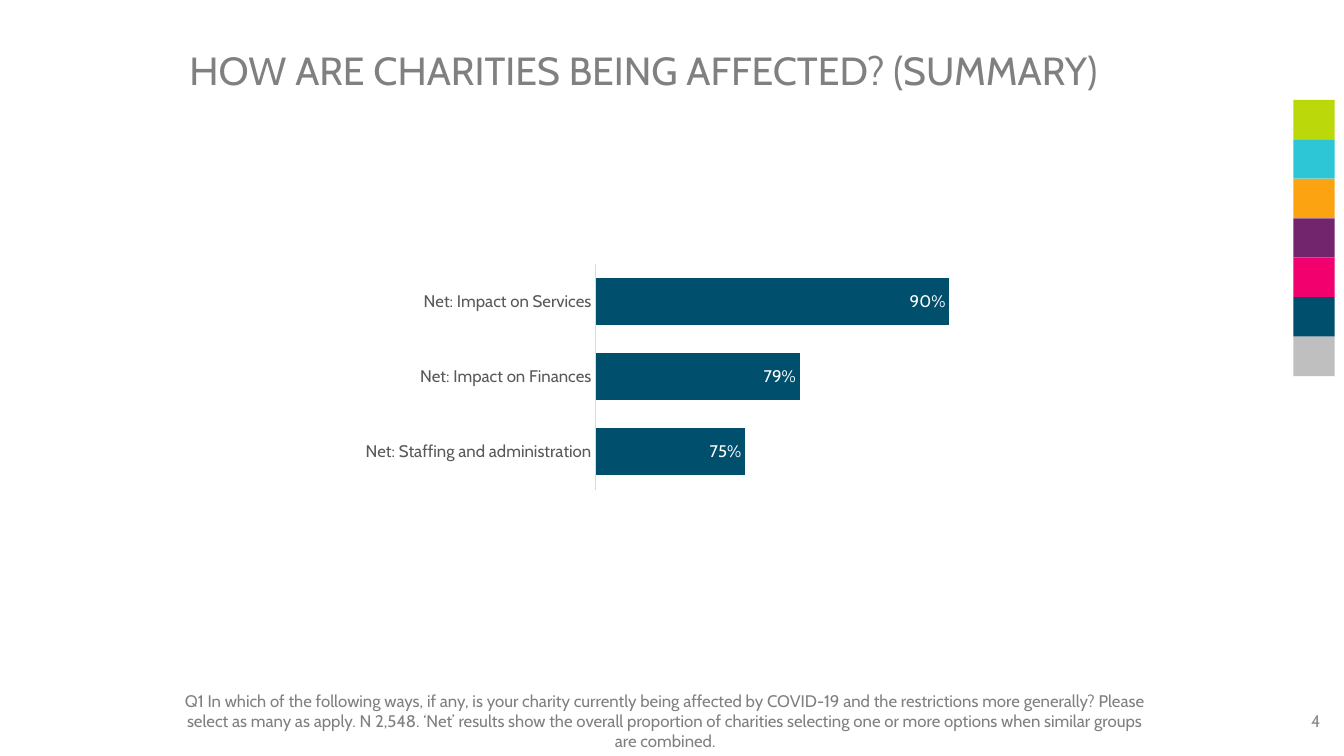
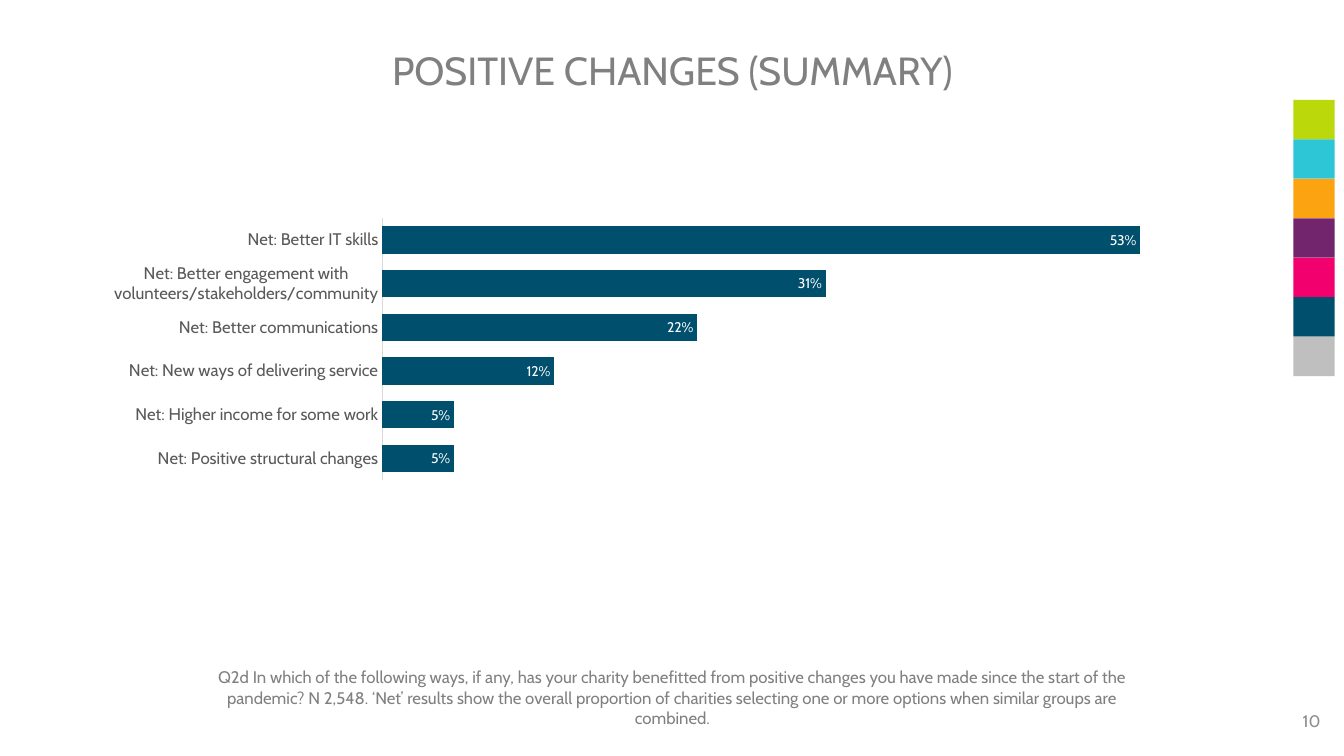
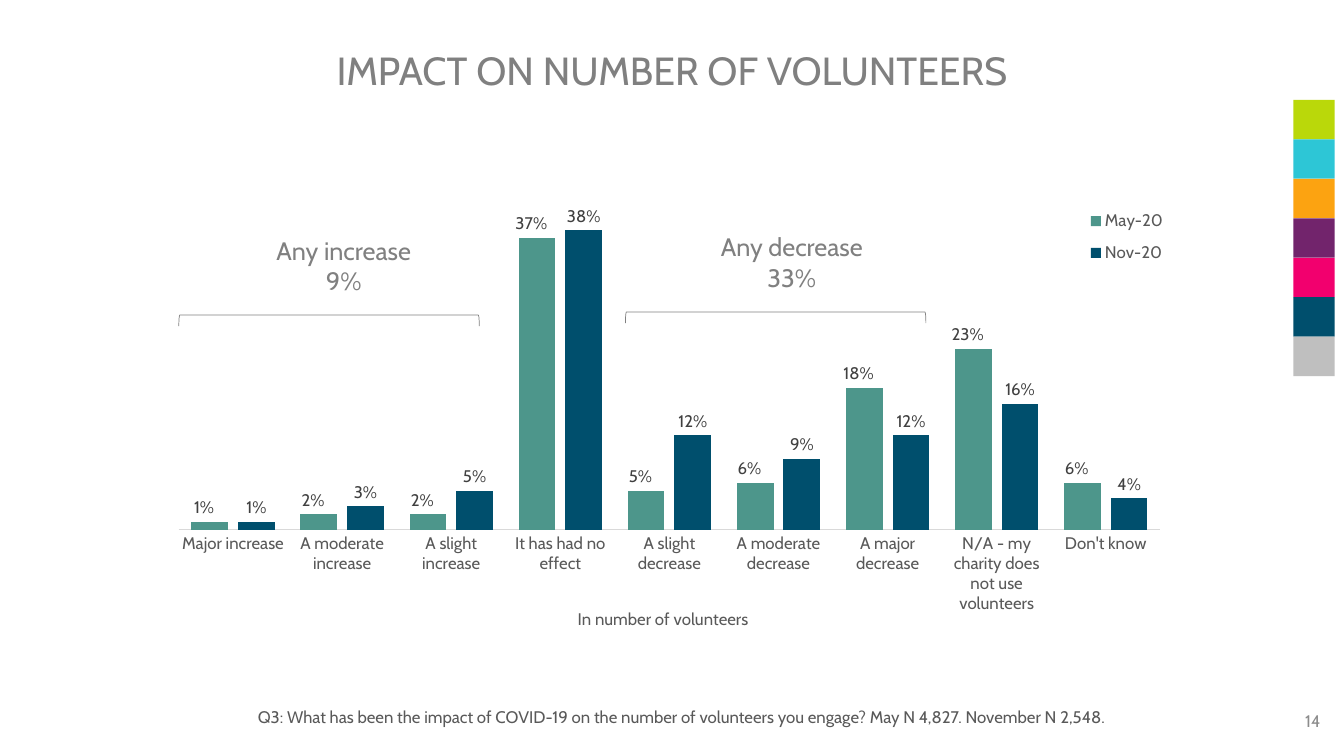
from lxml import etree
from pptx import Presentation
from pptx.chart.data import CategoryChartData
from pptx.dml.color import RGBColor
from pptx.enum.chart import (XL_CHART_TYPE, XL_LABEL_POSITION,
                             XL_LEGEND_POSITION, XL_TICK_MARK)
from pptx.enum.shapes import MSO_SHAPE
from pptx.enum.text import MSO_ANCHOR, MSO_AUTO_SIZE, PP_ALIGN
from pptx.oxml.ns import qn
from pptx.util import Pt

BARS, COLUMNS = XL_CHART_TYPE.BAR_CLUSTERED, XL_CHART_TYPE.COLUMN_CLUSTERED
INSIDE_END, OUTSIDE_END = XL_LABEL_POSITION.INSIDE_END, XL_LABEL_POSITION.OUTSIDE_END
LEGEND_RIGHT = XL_LEGEND_POSITION.RIGHT
NO_TICKS = XL_TICK_MARK.NONE
RECTANGLE, BRACKET = MSO_SHAPE.RECTANGLE, MSO_SHAPE.LEFT_BRACKET
TOP, MIDDLE = MSO_ANCHOR.TOP, MSO_ANCHOR.MIDDLE
FIXED_SIZE = MSO_AUTO_SIZE.NONE
CENTER, RIGHT = PP_ALIGN.CENTER, PP_ALIGN.RIGHT

WHITE = RGBColor(0xFF, 0xFF, 0xFF)
BLACK = RGBColor(0, 0, 0)
GRAY = RGBColor(0x80, 0x80, 0x80)
PAGE_GRAY = RGBColor(0x8C, 0x8C, 0x8C)
DARK_GRAY = RGBColor(0x59, 0x59, 0x59)
CHARCOAL = RGBColor(0x40, 0x40, 0x40)
AXIS_GRAY = RGBColor(0xD9, 0xD9, 0xD9)
SILVER = RGBColor(0xBF, 0xBF, 0xBF)
LIME = RGBColor(0xBA, 0xD8, 0x0A)
CYAN = RGBColor(0x2D, 0xC6, 0xD6)
ORANGE = RGBColor(0xFC, 0xA3, 0x11)
PURPLE = RGBColor(0x72, 0x24, 0x6C)
PINK = RGBColor(0xF2, 0x00, 0x6E)
NAVY = RGBColor(0x00, 0x4F, 0x6D)
TEAL = RGBColor(0x4D, 0x96, 0x8B)

SIDEBAR = (LIME, CYAN, ORANGE, PURPLE, PINK, NAVY, SILVER)
SWATCH_WIDTH, SWATCH_HEIGHT = 29.5, 28.2
TITLE_HEIGHT = 104.4
FONT = "Cabin"


def points(*lengths):
    return [Pt(length) for length in lengths]


def format_font(font, size, color, name=FONT):
    for attribute, value in {"name": name, "size": Pt(size)}.items():
        setattr(font, attribute, value)
    font.color.rgb = color


def write(box, lines, size, color, align=CENTER, anchor=TOP, spacing=None):
    frame = box.text_frame
    for attribute, value in {"word_wrap": True, "auto_size": FIXED_SIZE,
                             "vertical_anchor": anchor}.items():
        setattr(frame, attribute, value)
    frame.text = "\n".join(lines)
    for para in frame.paragraphs:
        para.alignment = align
        para.line_spacing = spacing
        for span in para.runs:
            format_font(span.font, size, color)


def add_text(page, area, lines, size, color, **layout):
    write(page.shapes.add_textbox(*points(*area)), lines, size, color, **layout)


def add_footnote(page, area, text, color=GRAY, spacing=None):
    add_text(page, area, [text], 12, color, spacing=spacing)


def add_page(deck, title, left, width, number):
    page = deck.slides.add_slide(deck.slide_layouts.get_by_name("Title Only"))
    heading = page.shapes.title
    heading.left, heading.top, heading.width, heading.height = points(
        left, 0, width, TITLE_HEIGHT)
    write(heading, [title], 28, GRAY, anchor=MIDDLE, spacing=0.9)
    add_text(page, (734.4, 500.4, 216, 28.8), [str(number)], 12, PAGE_GRAY,
             align=RIGHT, anchor=MIDDLE)
    return page


def move_sidebar_to_layout(page):
    """Draw the colour swatches and hand them to the layout that all pages share."""
    for row, color in enumerate(SIDEBAR):
        swatch = page.shapes.add_shape(RECTANGLE, *points(
            923.8, 71.3 + row * SWATCH_HEIGHT, SWATCH_WIDTH, SWATCH_HEIGHT))
        swatch.shadow.inherit = False
        swatch.fill.solid()
        swatch.fill.fore_color.rgb = color
        swatch.line.fill.background()
        swatch.element.nvSpPr.cNvPr.set("id", str(100 + row))
        page.slide_layout.shapes.element.append(swatch.element)


def place_part(chart, tag, index, inner=False, **fractions):
    """Give a chart part a manual layout, inserted as its child number index."""
    part = chart.element.find(".//" + qn(tag))
    for old in part.findall(qn("c:layout")):
        part.remove(old)
    layout = etree.Element(qn("c:layout"))
    manual = etree.SubElement(layout, qn("c:manualLayout"))
    settings = {"layoutTarget": "inner"} if inner else {}
    settings.update(xMode="edge", yMode="edge", **fractions)
    for name, value in settings.items():
        etree.SubElement(manual, qn("c:" + name)).set("val", str(value))
    part.insert(index, layout)


def add_percent_chart(page, area, kind, categories, series, scale, plot_area,
                      gap, overlap, label_size, label_color, label_position):
    """Series are (name, percentages, colour, label format) tuples."""
    data = CategoryChartData(number_format="0%")
    data.categories = categories
    for name, percentages, _, _ in series:
        data.add_series(name, [percent / 100 for percent in percentages])
    chart = page.shapes.add_chart(kind, *points(*area), data).chart
    chart.has_title = chart.has_legend = False
    format_font(chart.font, 10, BLACK, "Calibri")

    values = chart.value_axis
    values.minimum_scale, values.maximum_scale = scale
    values.has_major_gridlines = values.visible = False
    axis = chart.category_axis
    axis.major_tick_mark = axis.minor_tick_mark = NO_TICKS
    axis.format.line.color.rgb = AXIS_GRAY
    axis.format.line.width = Pt(0.75)
    format_font(axis.tick_labels.font, 12, DARK_GRAY)

    plot = chart.plots[0]
    for attribute, value in {"vary_by_categories": False, "gap_width": gap,
                             "overlap": overlap}.items():
        setattr(plot, attribute, value)
    for item, (_, _, color, number_format) in zip(plot.series, series):
        item.format.fill.solid()
        item.format.fill.fore_color.rgb = color
        labels = item.data_labels
        for attribute, value in {"show_value": True, "position": label_position,
                                 "number_format": number_format,
                                 "number_format_is_linked": False}.items():
            setattr(labels, attribute, value)
        format_font(labels.font, label_size, label_color)
    place_part(chart, "c:plotArea", 0, inner=True, **plot_area)
    return chart


def add_summary_bars(page, area, results, scale, plot_area, label_size):
    """Results run from the top bar to the bottom one."""
    categories, percentages = zip(*reversed(results))
    add_percent_chart(page, area, BARS, categories,
                      [("Series 1", percentages, NAVY, "0%")], scale, plot_area,
                      60, 0, label_size, WHITE, INSIDE_END)


def add_bracket_group(page, caption_area, lines, bracket_left, bracket_top):
    add_text(page, caption_area, lines, 18, GRAY)
    bracket = page.shapes.add_shape(
        BRACKET, *points(bracket_left, bracket_top, 7.9, 214.6))
    bracket.rotation = 90
    bracket.shadow.inherit = False
    bracket.fill.background()
    bracket.line.color.rgb = GRAY
    bracket.line.width = Pt(0.5)


def build_affected_page(deck):
    page = add_page(deck, "HOW ARE CHARITIES BEING AFFECTED? (SUMMARY)", 80, 759, 4)
    move_sidebar_to_layout(page)
    add_footnote(page, (120.2, 489.6, 710, 39.6),
                 "Q1 In which of the following ways, if any, is your charity currently "
                 "being affected by COVID-19 and the restrictions more generally? Please "
                 "select as many as apply. N 2,548. ‘Net’ results show the overall "
                 "proportion of charities selecting one or more options when similar "
                 "groups are combined.")
    add_summary_bars(page, (147.6, 179.3, 661.7, 181.4), [
        ("Net: Impact on Services", 90),
        ("Net: Impact on Finances", 79),
        ("Net: Staffing and administration", 75),
    ], (0.64, 0.96), {"x": 0.42, "y": 0.05, "w": 0.47, "h": 0.89}, 12)


def build_positive_page(deck):
    page = add_page(deck, "POSITIVE CHANGES (SUMMARY)", 66.2, 828, 10)
    add_summary_bars(page, (66.2, 151.9, 828, 195.1), [
        ("Net: Better IT skills", 53),
        ("Net: Better engagement with volunteers/stakeholders/community", 31),
        ("Net: Better communications", 22),
        ("Net: New ways of delivering service", 12),
        ("Net: Higher income for some work", 5),
        ("Net: Positive structural changes", 5),
    ], (0, 0.6), {"x": 0.25, "y": 0.02, "w": 0.74, "h": 0.96}, 10)
    add_footnote(page, (146.2, 473, 668.2, 47.5),
                 "Q2d In which of the following ways, if any, has your charity benefitted "
                 "from positive changes you have made since the start of the pandemic? "
                 "N 2,548. ‘Net’ results show the overall proportion of charities "
                 "selecting one or more options when similar groups are combined.")


def build_volunteers_page(deck):
    page = add_page(deck, "IMPACT ON NUMBER OF VOLUNTEERS", 159.1, 641.5, 14)
    categories = ["Major increase", "A moderate increase", "A slight increase",
                  "It has had no effect", "A slight decrease",
                  "A moderate decrease", "A major decrease",
                  "N/A - my charity does not use volunteers", "Don't know"]
    series = [
        ("May-20", (1, 2, 2, 37, 5, 6, 18, 23, 6), TEAL, r"0%\ \ \ "),
        ("Nov-20", (1, 3, 5, 38, 12, 9, 12, 16, 4), NAVY, "0%"),
    ]
    chart = add_percent_chart(page, (111.6, 121, 797, 357.8), COLUMNS, categories,
                              series, (0, 0.4),
                              {"x": 0.02, "y": 0.09, "w": 0.88, "h": 0.63},
                              70, -27, 12, CHARCOAL, OUTSIDE_END)
    chart.has_legend = True
    chart.legend.position = LEGEND_RIGHT
    chart.legend.include_in_layout = False
    format_font(chart.legend.font, 12, DARK_GRAY)
    place_part(chart, "c:legend", 1, x=0.83, y=0.06, w=0.08, h=0.15)

    title = chart.category_axis.axis_title.text_frame
    title.text = "In number of volunteers"
    span = title.paragraphs[0].runs[0]
    format_font(span.font, 12, DARK_GRAY)
    span.font.bold = False
    place_part(chart, "c:title", 1, x=0.375, y=0.87)

    add_footnote(page, (159.1, 500.4, 655.9, 28.1),
                 "Q3: What has been the impact of COVID-19 on the number of volunteers "
                 "you engage? May N 4,827. November N 2,548.", DARK_GRAY, 1.07)
    add_bracket_group(page, (111.6, 164.2, 267.8, 51.1), ["Any increase", "9%"],
                      231.1, 121.7)
    add_bracket_group(page, (504, 162, 123.1, 51.1), ["Any decrease", "33%"],
                      550.1, 119.5)


def main():
    deck = Presentation()
    deck.slide_width, deck.slide_height = points(960, 540)
    build_affected_page(deck)
    build_positive_page(deck)
    build_volunteers_page(deck)
    deck.save("out.pptx")


if __name__ == "__main__":
    main()
